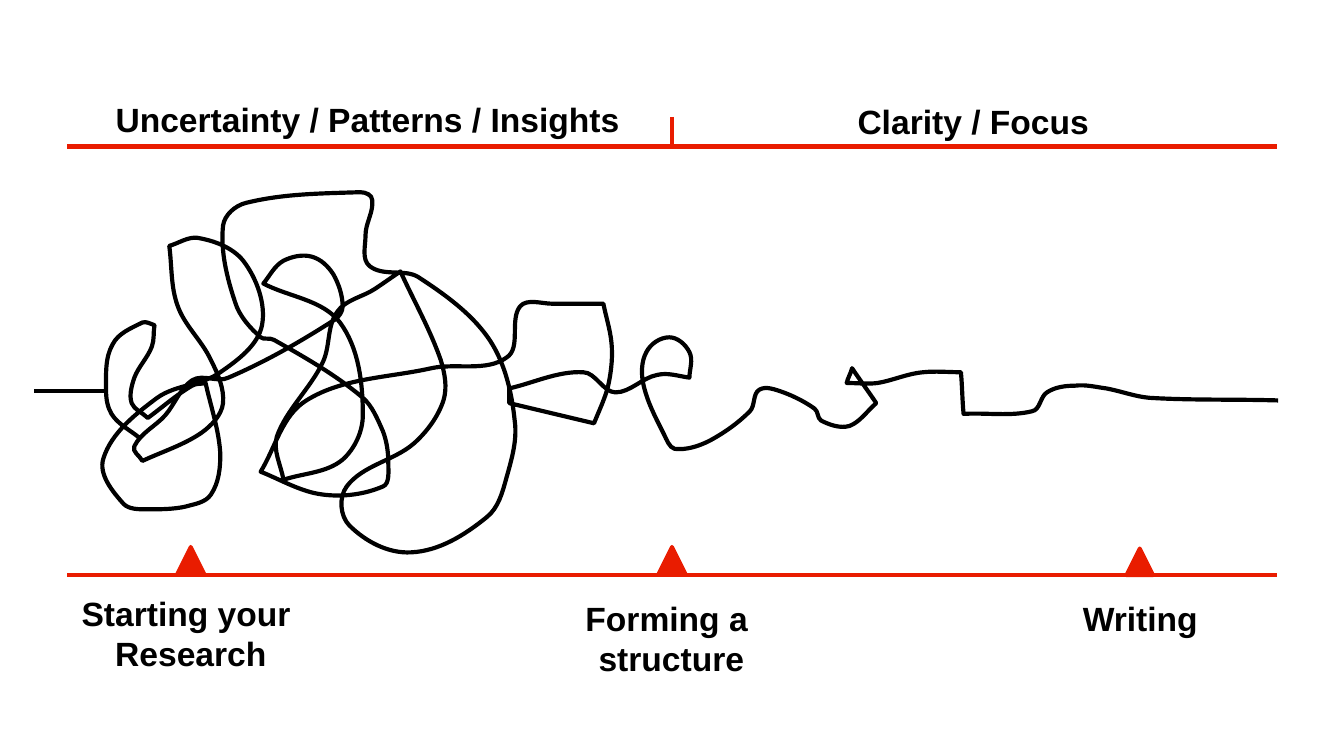
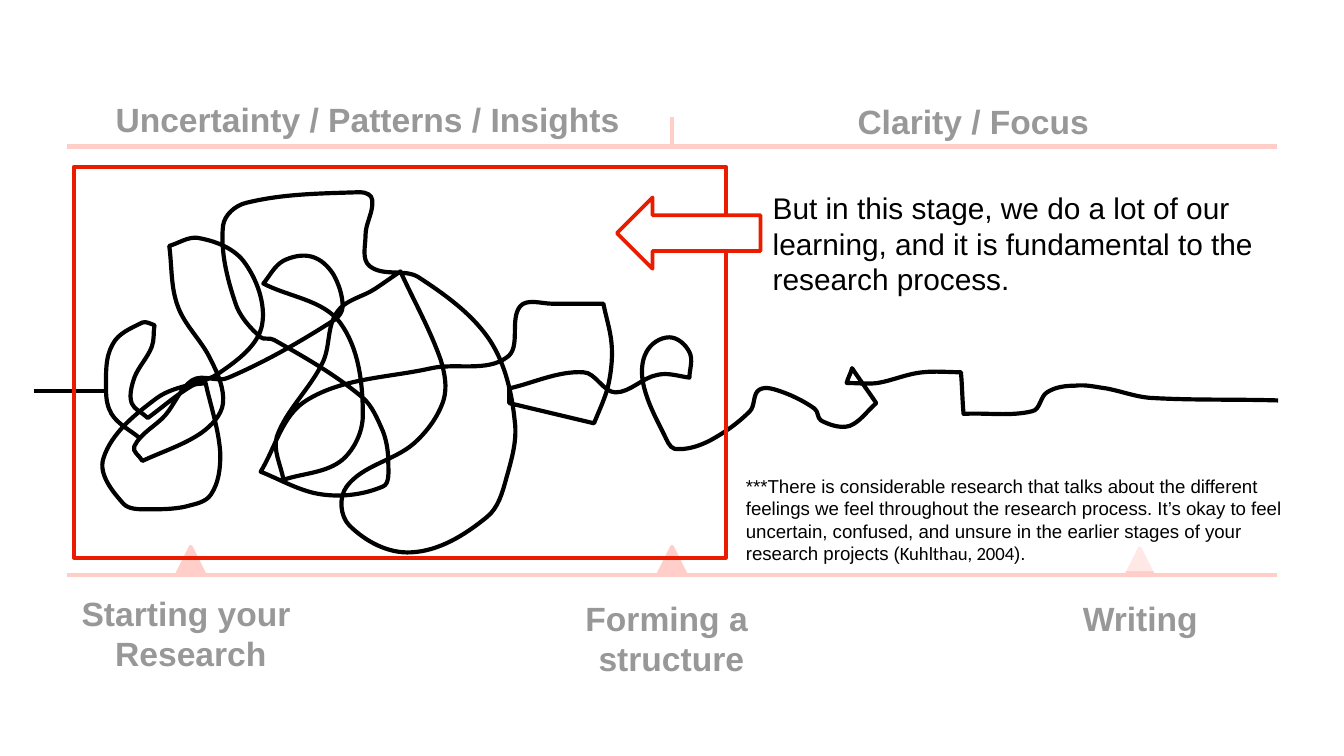
from dataclasses import dataclass
from math import hypot

from lxml import etree
from pptx import Presentation
from pptx.dml.color import RGBColor
from pptx.enum.shapes import MSO_CONNECTOR, MSO_SHAPE
from pptx.enum.text import MSO_ANCHOR, MSO_AUTO_SIZE, PP_ALIGN
from pptx.oxml.ns import qn
from pptx.shapes.autoshape import Shape
from pptx.slide import Slide
from pptx.util import Pt

STRAIGHT = MSO_CONNECTOR.STRAIGHT
TRIANGLE, RECTANGLE, LEFT_ARROW = MSO_SHAPE.ISOSCELES_TRIANGLE, MSO_SHAPE.RECTANGLE, MSO_SHAPE.LEFT_ARROW
LEFT, CENTER = PP_ALIGN.LEFT, PP_ALIGN.CENTER
TOP, MIDDLE = MSO_ANCHOR.TOP, MSO_ANCHOR.MIDDLE
GROW = MSO_AUTO_SIZE.SHAPE_TO_FIT_TEXT

RED = RGBColor(0xE9, 0x1C, 0x00)
PALE_RED = RGBColor(0xFF, 0xCE, 0xC8)
BLACK = RGBColor(0, 0, 0)
GREY = RGBColor(0x98, 0x98, 0x98)
WHITE = RGBColor(0xFF, 0xFF, 0xFF)

HEADING_FONT, CITATION_FONT = "Arial", "Calibri"
RULE_WIDTH, OUTLINE_WIDTH = Pt(2.25), Pt(2)
INSET = Pt(3.6)
AXIS_LEFT, AXIS_RIGHT, AXIS_MIDDLE = 36, 684, 360
PHASE_Y, STEP_Y, TICK_TOP = 78.5, 308.2, 62.6
MARKER_SIZE = 14.4

# The squiggle passes through these points, in steps of SQUIGGLE_UNIT.
SQUIGGLE_UNIT = Pt(0.72)
SHARP_TURN_COSINE = 0.25
SQUIGGLE = (
    (104, 326), (83, 308), (79, 291), (84, 256), (106, 240), (115, 242), (113, 258), (100, 281),
    (98, 300), (110, 311), (143, 287), (153, 285), (164, 338), (157, 368), (138, 377), (109, 379),
    (92, 375), (77, 341), (117, 296), (164, 277), (195, 242), (181, 194), (147, 177), (126, 183),
    (132, 227), (157, 268), (166, 300), (150, 322), (106, 343), (100, 332), (123, 309), (143, 283),
    (170, 281), (249, 238), (255, 228), (248, 204), (232, 191), (211, 194), (196, 211), (253, 240),
    (270, 309), (255, 342), (211, 357), (206, 325), (240, 270), (251, 232), (279, 215), (298, 202),
    (328, 268), (330, 298), (308, 330), (258, 362), (260, 391), (306, 411), (362, 385), (377, 355),
    (383, 313), (365, 254), (311, 206), (275, 198), (272, 175), (277, 149), (268, 143), (183, 151),
    (166, 168), (175, 225), (194, 251), (204, 253), (270, 296), (285, 321), (289, 345), (285, 362),
    (240, 368), (194, 351), (228, 298), (321, 274), (377, 266), (387, 228), (411, 226), (449, 226),
    (455, 255), (453, 285), (442, 315), (379, 300), (379, 289), (434, 277), (458, 292), (489, 279),
    (513, 281), (513, 262), (498, 251), (481, 262), (479, 287), (494, 323), (502, 334), (528, 328),
    (558, 306), (565, 290), (583, 292), (606, 304), (611, 313), (632, 317), (652, 300), (634, 274),
    (630, 285), (653, 285), (687, 277), (715, 277), (717, 308), (768, 306), (779, 292), (800, 287),
    (823, 289), (855, 296), (951, 298),
)

Point = tuple[float, float]


@dataclass(frozen=True)
class Area:
    """Left, top, width and height in points."""
    left: float
    top: float
    width: float
    height: float

    def lengths(self) -> tuple[Pt, ...]:
        return tuple(Pt(value) for value in (self.left, self.top, self.width, self.height))


@dataclass(frozen=True)
class Span:
    text: str
    font: str = HEADING_FONT


@dataclass(frozen=True)
class Label:
    area: Area
    lines: tuple[str, ...]
    align: PP_ALIGN = CENTER


@dataclass(frozen=True)
class Palette:
    accent: RGBColor
    text: RGBColor


VIVID = Palette(RED, BLACK)
FADED = Palette(PALE_RED, GREY)

RULES = (
    (AXIS_LEFT, PHASE_Y, AXIS_RIGHT, PHASE_Y),
    (AXIS_LEFT, STEP_Y, AXIS_RIGHT, STEP_Y),
    (AXIS_MIDDLE, TICK_TOP, AXIS_MIDDLE, PHASE_Y),
)
PHASES = (
    Label(Area(58.3, 49.7, 280.1, 28.8), ("Uncertainty / Patterns / Insights",), LEFT),
    Label(Area(455.8, 50.4, 132.5, 28.8), ("Clarity / Focus",), LEFT),
)
STEPS = (
    Label(Area(39.6, 313.9, 125.3, 51.1), ("Starting your ", "Research")),
    Label(Area(309.6, 316.8, 100.1, 51.1), ("Forming a ", "structure")),
    Label(Area(576, 316.8, 69.8, 28.8), ("Writing",)),
)
MARKERS = tuple(
    Area(left, top, MARKER_SIZE, MARKER_SIZE)
    for left, top in ((95, 293), (352.8, 293), (603.4, 293.8))
)


def set_all(target, values: dict) -> None:
    for name, value in values.items():
        setattr(target, name, value)


def add_rule(shapes, ends: tuple[float, ...], color: RGBColor) -> None:
    rule = shapes.add_connector(STRAIGHT, *(Pt(value) for value in ends))
    rule.line.color.rgb = color
    rule.line.width = RULE_WIDTH
    etree.SubElement(rule.element.spPr, qn("a:effectLst"))


def add_figure(page: Slide, kind: MSO_SHAPE, area: Area,
               fill: RGBColor | None, outline: RGBColor | None) -> Shape:
    """Add a preset shape; None leaves its fill or outline out."""
    figure = page.shapes.add_shape(kind, *area.lengths())
    figure.shadow.inherit = False
    for part, color in ((figure.fill, fill), (figure.line.fill, outline)):
        if color is None:
            part.background()
        else:
            part.solid()
            part.fore_color.rgb = color
    if outline is not None:
        figure.line.width = OUTLINE_WIDTH
    return figure


def write(box: Shape, paras: tuple[tuple[Span, ...], ...], size: float, color: RGBColor,
          bold: bool = False, align: PP_ALIGN = LEFT, wrap: bool = True,
          anchor: MSO_ANCHOR = TOP) -> None:
    frame = box.text_frame
    set_all(frame, {
        "margin_left": INSET, "margin_right": INSET, "margin_top": INSET, "margin_bottom": INSET,
        "word_wrap": wrap, "auto_size": GROW, "vertical_anchor": anchor,
    })
    for index, spans in enumerate(paras):
        para = frame.add_paragraph() if index else frame.paragraphs[0]
        para.alignment = align
        for span in spans:
            run = para.add_run()
            run.text = span.text
            set_all(run.font, {"name": span.font, "size": Pt(size), "bold": bold})
            run.font.color.rgb = color


def add_label(page: Slide, label: Label, color: RGBColor) -> None:
    box = page.shapes.add_textbox(*label.area.lengths())
    paras = tuple((Span(line),) for line in label.lines)
    write(box, paras, 18, color, bold=True, align=label.align, wrap=False)


def handle(before: Point, point: Point, after: Point) -> Point:
    """Control point from point towards after; sharp turns stay corners."""
    in_x, in_y = point[0] - before[0], point[1] - before[1]
    out_x, out_y = after[0] - point[0], after[1] - point[1]
    reach = hypot(out_x, out_y)
    is_corner = in_x * out_x + in_y * out_y < SHARP_TURN_COSINE * hypot(in_x, in_y) * reach
    along_x, along_y = (out_x, out_y) if is_corner else (in_x + out_x, in_y + out_y)
    factor = reach / 3 / hypot(along_x, along_y)
    return point[0] + along_x * factor, point[1] + along_y * factor


def add_squiggle(page: Slide) -> None:
    """Draw the tangled line: straight segments first, then bent into curves."""
    group = page.shapes.add_group_shape()
    builder = group.shapes.build_freeform(*SQUIGGLE[0], scale=SQUIGGLE_UNIT)
    builder.add_line_segments(SQUIGGLE[1:], close=False)
    squiggle = builder.convert_to_shape()
    squiggle.shadow.inherit = False
    squiggle.fill.background()
    squiggle.line.color.rgb = BLACK
    squiggle.line.width = RULE_WIDTH

    min_x = min(x for x, _ in SQUIGGLE)
    min_y = min(y for _, y in SQUIGGLE)
    padded = (SQUIGGLE[0], *SQUIGGLE, SQUIGGLE[-1])
    segments = squiggle.element.findall(".//" + qn("a:lnTo"))
    for segment, before, start, end, after in zip(segments, padded, padded[1:], padded[2:], padded[3:]):
        bend = etree.Element(qn("a:cubicBezTo"))
        for x, y in (handle(before, start, end), handle(after, end, start), end):
            etree.SubElement(bend, qn("a:pt"), x=str(round(x - min_x)), y=str(round(y - min_y)))
        segment.getparent().replace(segment, bend)
    add_rule(group.shapes, (56.9, 209.5, 18, 209.5), BLACK)


def add_process(page: Slide, palette: Palette) -> None:
    for ends in RULES:
        add_rule(page.shapes, ends, palette.accent)
    for label in PHASES:
        add_label(page, label, palette.text)
    for area in MARKERS:
        add_figure(page, TRIANGLE, area, palette.accent, palette.accent)
    for label in STEPS:
        add_label(page, label, palette.text)
    add_squiggle(page)


def add_learning_stage(page: Slide) -> None:
    """Frame the uncertain stage and comment on it."""
    note = add_figure(page, RECTANGLE, Area(396, 250.6, 309.6, 55.4), WHITE, None)
    fill_color = note.element.spPr.find(qn("a:solidFill"))[0]
    etree.SubElement(fill_color, qn("a:alpha"), val="54000")
    write(note, ((
        Span("***There is considerable research that talks about the different feelings we feel "
             "throughout the research process. It’s okay to feel uncertain, confused, and unsure "
             "in the earlier stages of your research projects ("),
        Span("Kuhlthau, 2004", CITATION_FONT),
        Span(")."),
    ),), 10, BLACK, anchor=MIDDLE)
    add_figure(page, RECTANGLE, Area(39.6, 89.3, 349.2, 209.5), None, RED)
    comment = page.shapes.add_textbox(*Area(410.4, 97.9, 273.6, 65.5).lengths())
    write(comment, ((
        Span("But in this stage, we do a lot of our learning, and it is fundamental "
             "to the research process."),
    ),), 16, BLACK)
    add_figure(page, LEFT_ARROW, Area(330.5, 105.8, 77, 38.2), WHITE, RED)


def main() -> None:
    deck = Presentation()
    deck.slide_width, deck.slide_height = Pt(720), Pt(405)
    blank = deck.slide_layouts[6]
    add_process(deck.slides.add_slide(blank), VIVID)
    stage_page = deck.slides.add_slide(blank)
    add_process(stage_page, FADED)
    add_learning_stage(stage_page)
    deck.save("out.pptx")


if __name__ == "__main__":
    main()
